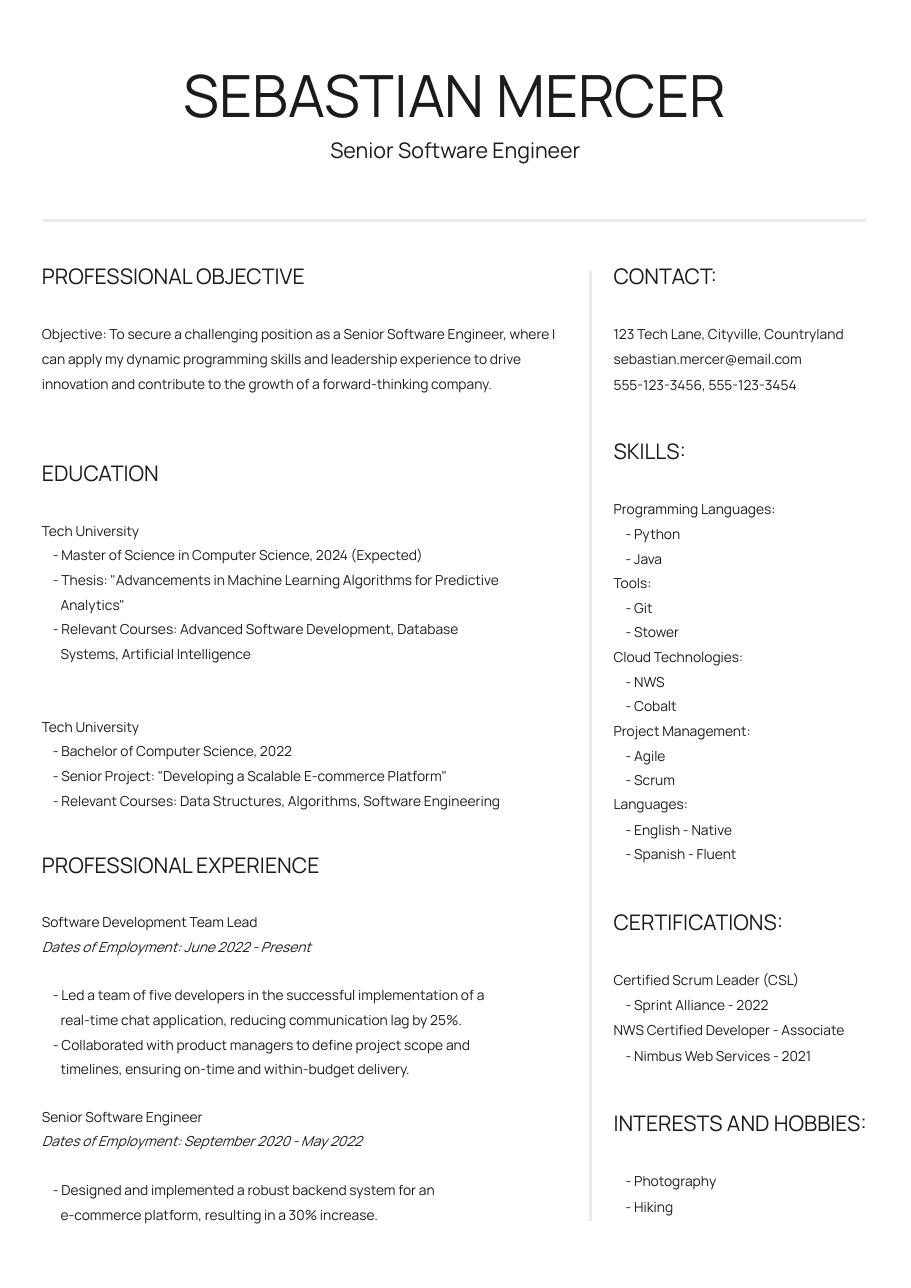
from lxml.etree import SubElement
from pptx import Presentation
from pptx.dml.color import RGBColor
from pptx.enum.shapes import MSO_CONNECTOR as CONN
from pptx.enum.text import MSO_ANCHOR, MSO_AUTO_SIZE as FIT, PP_ALIGN as AL
from pptx.oxml.ns import qn
from pptx.util import Inches, Pt

FONT, INK, RULE = "Manrope", "1B1B1A", "EAEAEA"
MAIN_X, MAIN_LIST_X, MAIN_W, MAIN_LIST_W = 0.38, 0.48, 4.72, 4.62
SIDE_X, SIDE_LIST_X, SIDE_W = 5.57, 5.68, 2.29
HEAD_GAP, ROW, HANG = 0.49, 0.23, 0.07

MAIN_HEADINGS = [
    (2.39, "PROFESSIONAL OBJECTIVE"),
    (4.18, "EDUCATION"),
    (7.73, "PROFESSIONAL EXPERIENCE"),
]
SIDE_HEADINGS = [
    (2.39, "CONTACT:", SIDE_W),
    (3.98, "SKILLS:", SIDE_W),
    (8.25, "CERTIFICATIONS:", SIDE_W),
    (10.08, "INTERESTS AND HOBBIES:", 2.4),
]
OBJECTIVE = (
    "Objective: To secure a challenging position as a Senior Software Engineer, "
    "where I can apply my dynamic programming skills and leadership experience "
    "to drive innovation and contribute to the growth of a forward-thinking company."
)
EDUCATION = [
    (4.67, 1.29, [
        "- Master of Science in Computer Science, 2024 (Expected)",
        "- Thesis: \"Advancements in Machine Learning Algorithms for Predictive\v"
        "Analytics\"",
        "- Relevant Courses: Advanced Software Development, Database\v"
        "Systems, Artificial Intelligence",
    ]),
    (6.45, 0.61, [
        "- Bachelor of Computer Science, 2022",
        "- Senior Project: \"Developing a Scalable E-commerce Platform\"",
        "- Relevant Courses: Data Structures, Algorithms, Software Engineering",
    ]),
]
JOBS = [
    (8.22, 0.83, "Software Development Team Lead", "June 2022 - Present", [
        "- Led a team of five developers in the successful implementation of a\v"
        "real-time chat application, reducing communication lag by 25%.",
        "- Collaborated with product managers to define project scope and\v"
        "timelines, ensuring on-time and within-budget delivery.",
    ]),
    (9.99, 0.38, "Senior Software Engineer", "September 2020 - May 2022", [
        "- Designed and implemented a robust backend system for an\v"
        "e-commerce platform, resulting in a 30% increase.",
    ]),
]
CONTACT = [
    "123 Tech Lane, Cityville, Countryland",
    "sebastian.mercer@email.com",
    "555-123-3456, 555-123-3454",
]
SKILLS = [
    ("Programming Languages:", "- Python", "- Java"),
    ("Tools:", "- Git", "- Stower"),
    ("Cloud Technologies:", "- NWS", "- Cobalt"),
    ("Project Management:", "- Agile", "- Scrum"),
    ("Languages:", "- English - Native", "- Spanish - Fluent"),
]
CERTIFICATIONS = [
    ("Certified Scrum Leader (CSL)", "- Sprint Alliance - 2022"),
    ("NWS Certified Developer - Associate", "- Nimbus Web Services - 2021"),
]
INTERESTS = ["- Photography", "- Hiking"]


def color(value):
    return RGBColor.from_string(value)


def fill_text(sp, lines, size, align=AL.LEFT, spacing=1.0, italic=False, hang=0):
    tf = sp.text_frame
    tf.margin_left = tf.margin_right = tf.margin_top = tf.margin_bottom = 0
    tf.word_wrap = True
    tf.vertical_anchor = MSO_ANCHOR.TOP
    tf.auto_size = FIT.SHAPE_TO_FIT_TEXT
    for i, line in enumerate(lines):
        p = tf.add_paragraph() if i else tf.paragraphs[0]
        p.text = line
        p.alignment = align
        p.line_spacing = spacing
        if hang:
            pPr = p._p.get_or_add_pPr()
            pPr.set("marL", str(Inches(hang)))
            pPr.set("indent", str(-Inches(hang)))
        for r in p.runs:
            r.font.name = FONT
            r.font.size = Pt(size)
            r.font.italic = italic
            r.font.color.rgb = color(INK)


def add_text(s, x, y, w, h, lines, size, **style):
    sp = s.shapes.add_textbox(Inches(x), Inches(y), Inches(w), Inches(h))
    fill_text(sp, lines, size, **style)


def add_title(s, text):
    sp = s.shapes.title
    sp.left, sp.top = Inches(1.34), Inches(0.54)
    sp.width, sp.height = Inches(5.58), Inches(0.64)
    fill_text(sp, [text], 38, align=AL.CENTER)


def add_heading(s, x, y, w, text):
    add_text(s, x, y, w, 0.24, [text], 14)


def add_body(s, x, y, w, lines, h=0.15, **style):
    add_text(s, x, y, w, h, lines, 9, spacing=1.5, **style)


def add_rule(s, x1, y1, x2, y2):
    line = s.shapes.add_connector(
        CONN.STRAIGHT, Inches(x1), Inches(y1), Inches(x2), Inches(y2))
    line.line.color.rgb = color(RULE)
    line.line.width = Pt(1.5)
    SubElement(line._element.spPr, qn("a:effectLst"))


def add_main_column(s):
    for y, text in MAIN_HEADINGS:
        add_heading(s, MAIN_X, y, 3.28, text)
    add_body(s, MAIN_X, 2.88, MAIN_W, [OBJECTIVE], h=0.83)
    for y, h, items in EDUCATION:
        add_body(s, MAIN_X, y, 1.78, ["Tech University"])
        add_body(s, MAIN_LIST_X, y + 0.215, MAIN_LIST_W, items, h=h, hang=HANG)
    for y, h, role, dates, items in JOBS:
        add_body(s, MAIN_X, y, 2.88, [role])
        add_body(s, MAIN_X, y + 0.22, MAIN_W,
                 [f"Dates of Employment: {dates}"], italic=True)
        add_body(s, MAIN_LIST_X, y + 0.66, MAIN_LIST_W, items, h=h, hang=HANG)


def add_sidebar(s):
    for y, text, w in SIDE_HEADINGS:
        add_heading(s, SIDE_X, y, w, text)
    contact_y, skills_y, cert_y, interests_y = (
        y + HEAD_GAP for y, _, _ in SIDE_HEADINGS)
    for i, line in enumerate(CONTACT):
        add_body(s, SIDE_X, contact_y + i * ROW, SIDE_W, [line])
    for i, (label, first, second) in enumerate(SKILLS):
        y = skills_y + i * 0.67
        add_body(s, SIDE_X, y, SIDE_W, [label])
        add_body(s, SIDE_LIST_X, y + 0.23, 1.5, [first])
        add_body(s, SIDE_LIST_X, y + 0.45, 1.5, [second])
    for i, (name, issuer) in enumerate(CERTIFICATIONS):
        y = cert_y + 2 * i * ROW
        add_body(s, SIDE_X, y, 2.45, [name])
        add_body(s, SIDE_LIST_X, y + ROW, 1.98, [issuer])
    for i, hobby in enumerate(INTERESTS):
        add_body(s, SIDE_LIST_X, interests_y + i * ROW, 1.91, [hobby])


def main():
    prs = Presentation()
    prs.slide_width, prs.slide_height = Inches(8.27), Inches(11.69)
    s = prs.slides.add_slide(prs.slide_layouts[5])
    add_title(s, "SEBASTIAN MERCER")
    add_text(s, 2.24, 1.24, 3.79, 0.24, ["Senior Software Engineer"], 14,
             align=AL.CENTER)
    add_rule(s, 0.39, 2, 7.86, 2)
    add_main_column(s)
    add_rule(s, 5.36, 2.46, 5.36, 11.08)
    add_sidebar(s)
    prs.save("out.pptx")


if __name__ == "__main__":
    main()
